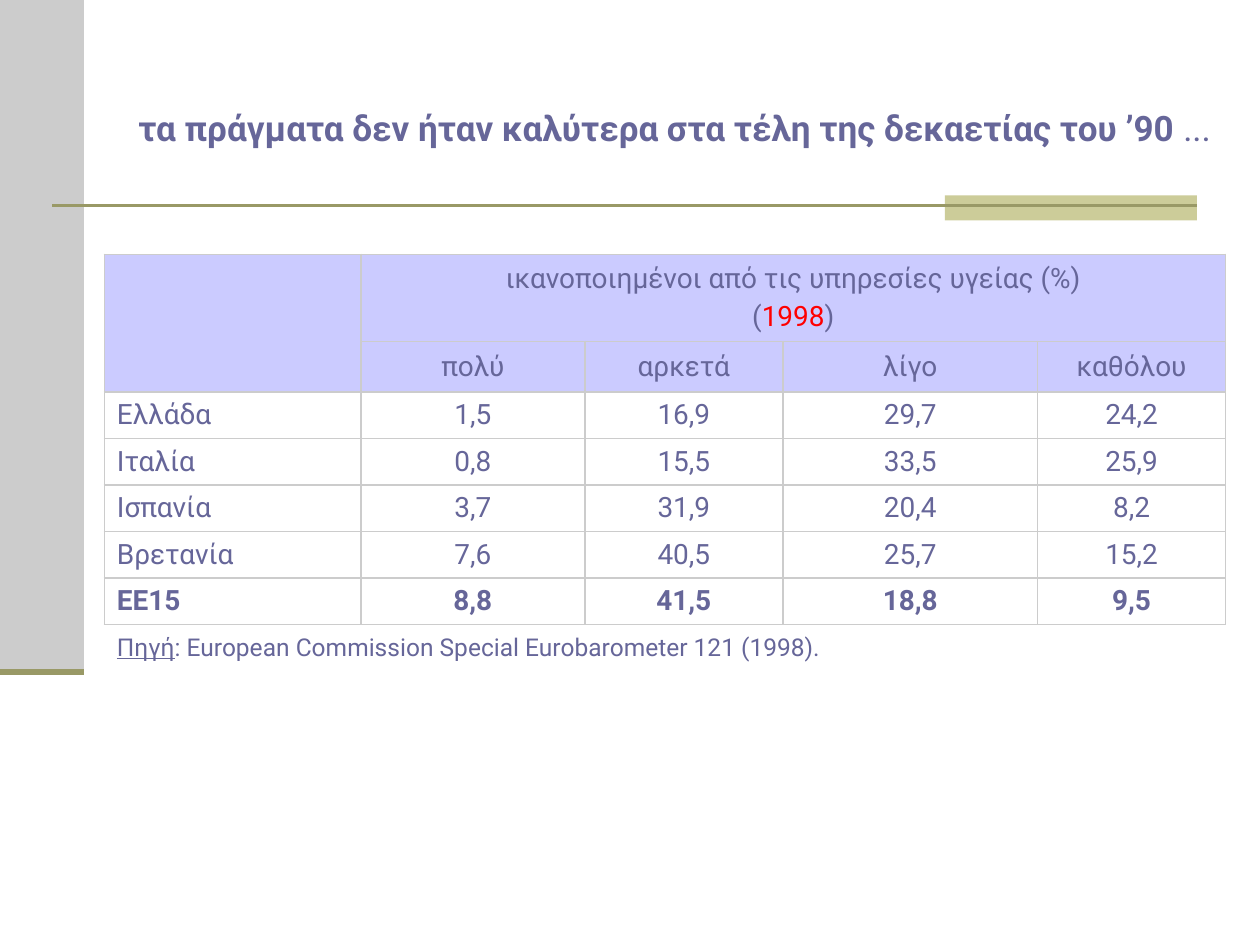
import pptx
import pptx.util
import pptx.dml.color
import pptx.enum.shapes
import pptx.enum.text
import pptx.oxml
import pptx.oxml.ns
import lxml.etree

Pt = pptx.util.Pt
RGBColor = pptx.dml.color.RGBColor
ALIGN = pptx.enum.text.PP_ALIGN
ANCHOR = pptx.enum.text.MSO_ANCHOR
qn = pptx.oxml.ns.qn

GREY = RGBColor(0xCC, 0xCC, 0xCC)
SAND = RGBColor(0xCC, 0xCC, 0x99)
OLIVE = RGBColor(0x99, 0x99, 0x66)
SLATE = RGBColor(0x66, 0x66, 0x99)
LILAC = RGBColor(0x99, 0x99, 0xFF)
RED = RGBColor(0xFF, 0x00, 0x00)


def add_run(paragraph, text, size=16, bold=False, color=SLATE, underline=False):
    run = paragraph.add_run()
    run.text = text
    run.font.name = "Roboto"
    run.font.size = Pt(size)
    run.font.bold = bold
    run.font.underline = underline
    run.font.color.rgb = color


def set_borders(cell, visible_sides):
    """Draw the named sides in grey and clear the others."""
    properties = cell._tc.get_or_add_tcPr()
    for position, side in enumerate("LRTB"):
        border = lxml.etree.Element(qn(f"a:ln{side}"), w=str(Pt(1)))
        if side in visible_sides:
            fill = lxml.etree.SubElement(border, qn("a:solidFill"))
            lxml.etree.SubElement(fill, qn("a:srgbClr"), val=str(GREY))
        else:
            lxml.etree.SubElement(border, qn("a:noFill"))
        properties.insert(position, border)


presentation = pptx.Presentation()
presentation.slide_width = Pt(720)
presentation.slide_height = Pt(540)
slide = presentation.slides.add_slide(presentation.slide_layouts[6])

# Side band and accent block
for left, top, width, height, color in [(0, 0, 48, 384, GREY), (540, 111.6, 144, 14.4, SAND)]:
    block = slide.shapes.add_shape(
        pptx.enum.shapes.MSO_SHAPE.RECTANGLE, Pt(left), Pt(top), Pt(width), Pt(height))
    block.shadow.inherit = False
    block.fill.solid()
    block.fill.fore_color.rgb = color
    block.line.fill.background()

# Rule under the title and foot of the side band
for start, end, y, weight in [(30, 684, 117.6, 1.5), (0, 48, 384, 3.5)]:
    rule = slide.shapes.add_connector(
        pptx.enum.shapes.MSO_CONNECTOR.STRAIGHT, Pt(start), Pt(y), Pt(end), Pt(y))
    rule.line.color.rgb = OLIVE
    rule.line.width = Pt(weight)
    lxml.etree.SubElement(rule._element.spPr, qn("a:effectLst"))

# Title, raised above the rule by its bottom inset
title = slide.shapes.add_textbox(Pt(72), Pt(21.6), Pt(648), Pt(90)).text_frame
title.word_wrap = True
title.vertical_anchor = ANCHOR.BOTTOM
title.margin_bottom = Pt(27)
add_run(title.paragraphs[0], "τα πράγματα δεν ήταν καλύτερα στα τέλη της δεκαετίας του ’90", 20, True)
add_run(title.paragraphs[0], " ...", 20)

# Satisfaction table
levels = ["", "πολύ", "αρκετά", "λίγο", "καθόλου"]
countries = [
    ["Ελλάδα", "1,5", "16,9", "29,7", "24,2"],
    ["Ιταλία", "0,8", "15,5", "33,5", "25,9"],
    ["Ισπανία", "3,7", "31,9", "20,4", "8,2"],
    ["Βρετανία", "7,6", "40,5", "25,7", "15,2"],
    ["ΕΕ15", "8,8", "41,5", "18,8", "9,5"],
]
column_widths = [146.6, 128, 113.2, 145.6, 107.4]
row_heights = [49.7] + [26.6] * 7
source_row = len(row_heights) - 1

satisfaction = slide.shapes.add_table(
    len(row_heights), len(column_widths), Pt(59.6), Pt(145.4),
    Pt(sum(column_widths)), Pt(sum(row_heights))).table
satisfaction.first_row = False
satisfaction.horz_banding = False
for column, width in zip(satisfaction.columns, column_widths):
    column.width = Pt(width)
for row, height in zip(satisfaction.rows, row_heights):
    row.height = Pt(height)

# Fills and borders
for row_index in range(len(row_heights)):
    for column_index in range(len(column_widths)):
        cell = satisfaction.cell(row_index, column_index)
        cell.vertical_anchor = ANCHOR.MIDDLE
        if row_index < 2:
            cell.fill.solid()
            cell.fill.fore_color.rgb = LILAC
            tint = cell._tc.tcPr.find(".//" + qn("a:srgbClr"))
            lxml.etree.SubElement(tint, qn("a:alpha"), val="50000")
        else:
            cell.fill.background()
        set_borders(cell, "T" if row_index == source_row else "LRTB")

satisfaction.cell(0, 0).merge(satisfaction.cell(1, 0))
satisfaction.cell(0, 1).merge(satisfaction.cell(0, 4))
satisfaction.cell(source_row, 0).merge(satisfaction.cell(source_row, 4))

# Spanning header
header = satisfaction.cell(0, 1).text_frame
question = header.paragraphs[0]
question.alignment = ALIGN.CENTER
add_run(question, "ικανοποιημένοι από τις υπηρεσίες υγείας (%)")
year = header.add_paragraph()
year.alignment = ALIGN.CENTER
year.space_before = Pt(3.2)
add_run(year, "(")
add_run(year, "1998", color=RED)
add_run(year, ")")

# Levels and figures
for row_index, values in enumerate([levels] + countries, start=1):
    for column_index, value in enumerate(values):
        if value:
            paragraph = satisfaction.cell(row_index, column_index).text_frame.paragraphs[0]
            paragraph.alignment = ALIGN.CENTER if column_index else ALIGN.LEFT
            add_run(paragraph, value, bold=values[0] == "ΕΕ15")

# Source note
source = satisfaction.cell(source_row, 0).text_frame.paragraphs[0]
add_run(source, "Πηγή", 14, underline=True)
add_run(source, ": European Commission Special Eurobarometer 121 (1998).", 14)

presentation.save("out.pptx")
